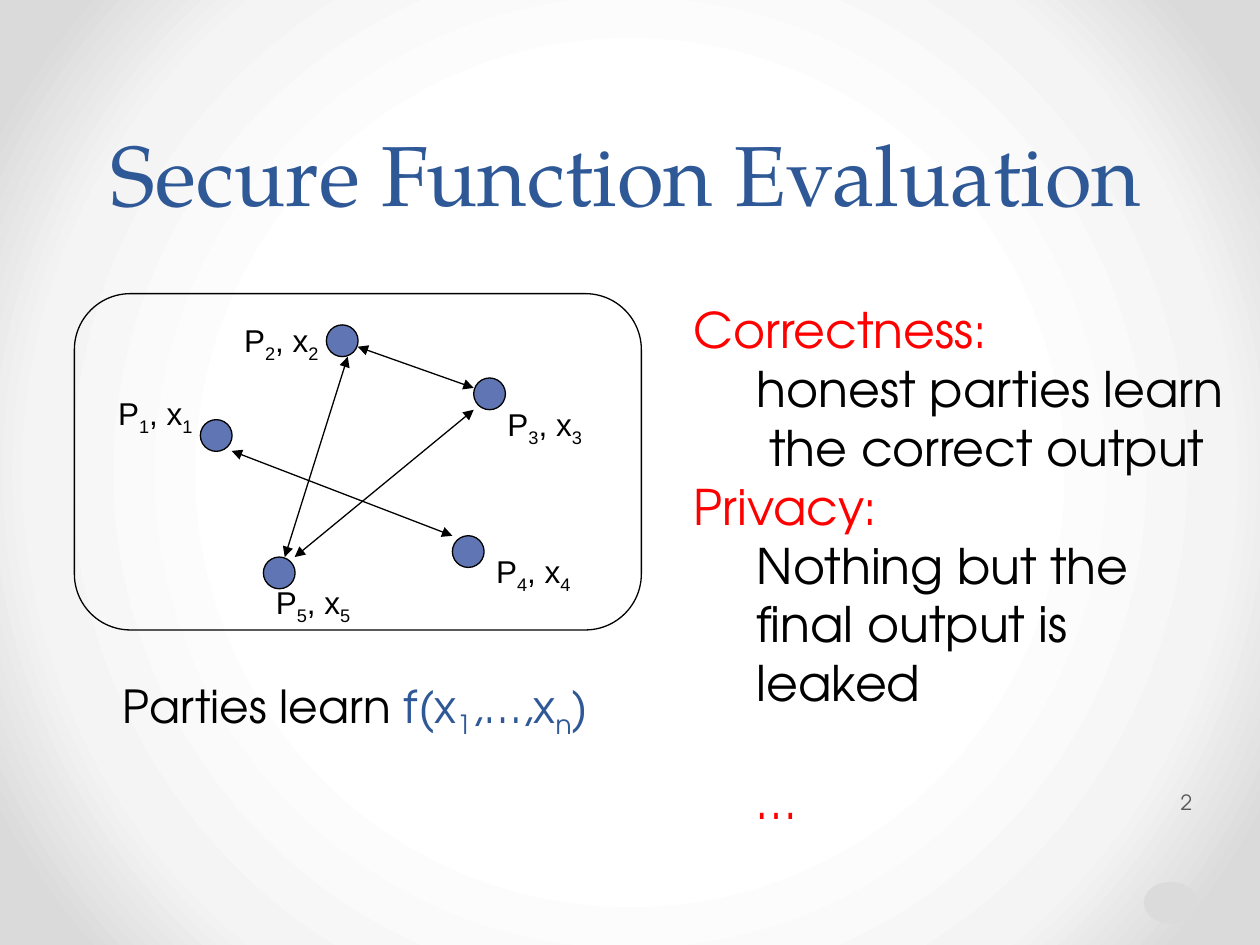
from dataclasses import dataclass

from lxml import etree
from pptx import Presentation
from pptx.dml.color import RGBColor
from pptx.enum.shapes import MSO_CONNECTOR, MSO_SHAPE
from pptx.enum.text import MSO_ANCHOR, PP_ALIGN
from pptx.oxml import parse_xml
from pptx.oxml.ns import nsdecls, qn
from pptx.util import Cm, Pt

OVAL = MSO_SHAPE.OVAL
FRAME = MSO_SHAPE.FLOWCHART_ALTERNATE_PROCESS
STRAIGHT = MSO_CONNECTOR.STRAIGHT
LEFT, CENTER = PP_ALIGN.LEFT, PP_ALIGN.CENTER
TOP, MIDDLE, BOTTOM = MSO_ANCHOR.TOP, MSO_ANCHOR.MIDDLE, MSO_ANCHOR.BOTTOM

COLORS = {
    "title": "2F5897", "text": "000000", "accent": "FF0000",
    "node": "6076B4", "number": "595959", "dot": "DBDBDB",
}
BACKGROUND_STOPS = {50: "FFFFFF", 76: "F4F4F4", 92: "DADADA"}
SERIF, SANS, LABEL = "TeX Gyre Pagella", "TeX Gyre Adventor", "Arial"
NODE_SIZE = 0.64


@dataclass
class Run:
    text: str
    color: str = "text"
    sub: bool = False


@dataclass
class Para:
    runs: list[Run]
    indent: float = 0
    before: float = 0


@dataclass
class Party:
    number: str
    node: tuple[float, float]
    label: tuple[float, float]


@dataclass
class Link:
    start: tuple[float, float]
    end: tuple[float, float]


PARTIES = [
    Party("1", (4.04, 8.46), (2.13, 7.82)),
    Party("2", (6.58, 6.55), (4.67, 6.35)),
    Party("3", (9.55, 7.62), (9.98, 8.05)),
    Party("4", (9.12, 10.8), (9.75, 11.0)),
    Party("5", (5.31, 11.23), (5.31, 11.63)),
]
LINKS = [
    Link((9.55, 7.82), (7.21, 6.99)),
    Link((7.01, 7.19), (5.74, 11.23)),
    Link((9.12, 10.8), (4.67, 9.09)),
    Link((9.55, 8.26), (5.94, 11.23)),
]
PROPERTIES = [
    Para([Run("Correctness:", "accent")]),
    Para([Run("honest parties learn")], indent=1.27),
    Para([Run("the correct output")], indent=1.52),
    Para([Run("Privacy:", "accent")]),
    Para([Run("Nothing but the")], indent=1.27),
    Para([Run("final output is leaked")], indent=1.27),
    Para([Run("…", "accent")], indent=1.27, before=33.6),
]


def rgb(name: str) -> RGBColor:
    return RGBColor.from_string(COLORS[name])


def add_background(s) -> None:
    """Radial gradient, white in the middle and grey at the corners."""
    stops = "".join(
        f'<a:gs pos="{pos * 1000}"><a:srgbClr val="{color}"/></a:gs>'
        for pos, color in BACKGROUND_STOPS.items())
    s.background.fill.solid()
    bg = s._element.find(".//" + qn("p:bgPr"))
    bg.replace(bg[0], parse_xml(
        f'<a:gradFill {nsdecls("a")} rotWithShape="1"><a:gsLst>{stops}</a:gsLst>'
        '<a:path path="circle"><a:fillToRect l="50000" t="50000" r="50000" b="50000"/>'
        '</a:path></a:gradFill>'))


def add_text(s, box: tuple, paras: list[Para], *, size: float, font: str = SANS,
             align=LEFT, anchor=TOP, spacing=None, left_inset: float = 0.25) -> None:
    tf = s.shapes.add_textbox(*map(Cm, box)).text_frame
    tf.word_wrap = True
    tf.vertical_anchor = anchor
    tf.margin_left = Cm(left_inset)
    for i, para in enumerate(paras):
        p = tf.add_paragraph() if i else tf.paragraphs[0]
        p.alignment = align
        p.space_before = Pt(para.before)
        if spacing:
            p.line_spacing = Pt(spacing)
        p._p.get_or_add_pPr().set("marL", str(Cm(para.indent)))
        for run in para.runs:
            r = p.add_run()
            r.text = run.text
            r.font.size, r.font.name = Pt(size), font
            r.font.color.rgb = rgb(run.color)
            if run.sub:
                r.font._element.set("baseline", "-25000")


def add_outline(s, kind, box: tuple, fill: str | None = None, line: bool = True) -> None:
    sp = s.shapes.add_shape(kind, *map(Cm, box))
    sp.shadow.inherit = False
    if fill:
        sp.fill.solid()
        sp.fill.fore_color.rgb = rgb(fill)
    else:
        sp.fill.background()
    if line:
        sp.line.color.rgb = rgb("text")
        sp.line.width = Pt(0.75)
    else:
        sp.line.fill.background()


def add_link(s, link: Link) -> None:
    c = s.shapes.add_connector(STRAIGHT, *map(Cm, link.start + link.end))
    c.line.color.rgb = rgb("text")
    c.line.width = Pt(0.75)
    ln = c.line._get_or_add_ln()
    for end in ("a:headEnd", "a:tailEnd"):
        etree.SubElement(ln, qn(end), type="triangle")
    etree.SubElement(c._element.spPr, qn("a:effectLst"))


def add_label(s, party: Party) -> None:
    index = Run(party.number, sub=True)
    add_text(s, (*party.label, 2.34, 1.02),
             [Para([Run("P"), index, Run(", x"), index])], size=18, font=LABEL)


def main() -> None:
    prs = Presentation()
    prs.slide_width, prs.slide_height = Cm(25.4), Cm(19.05)
    s = prs.slides.add_slide(prs.slide_layouts[6])

    # Backdrop
    add_background(s)
    add_outline(s, OVAL, (23.06, 17.78, 1.07, 0.84), fill="dot", line=False)

    # Title, result line and slide number
    add_text(s, (1.47, 0.58, 22.3, 4.06), [Para([Run("Secure Function Evaluation", "title")])],
             size=48.6, font=SERIF, align=CENTER, anchor=BOTTOM, spacing=58)
    add_text(s, (1.47, 13.54, 12.73, 1.9), [Para([
        Run("Parties learn "), Run("f(x", "title"), Run("1", "title", sub=True),
        Run(",…,x", "title"), Run("n", "title", sub=True), Run(")", "title"),
    ], indent=0.76)], size=26)
    add_text(s, (23.72, 15.67, 1.55, 1.02), [Para([Run("2", "number")])],
             size=12, anchor=MIDDLE, left_inset=0.08)

    # Network of parties
    for party in PARTIES:
        add_outline(s, OVAL, (*party.node, NODE_SIZE, NODE_SIZE), fill="node")
    for link in LINKS:
        add_link(s, link)
    add_outline(s, FRAME, (1.5, 5.92, 11.43, 6.78))
    for party in PARTIES:
        add_label(s, party)

    # Security properties
    add_text(s, (13.74, 5.92, 11.6, 10.59), PROPERTIES, size=28)

    prs.save("out.pptx")


if __name__ == "__main__":
    main()
